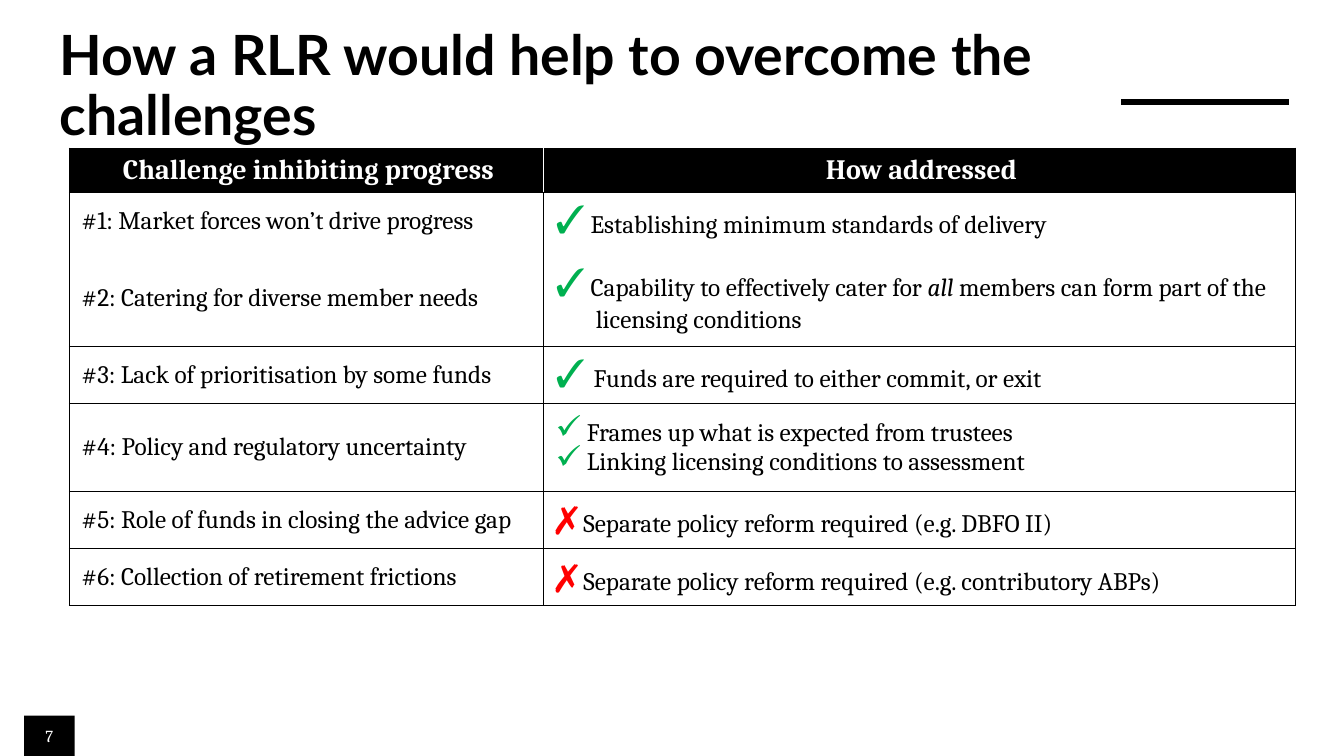
from lxml.etree import SubElement as Sub
from pptx import Presentation
from pptx.dml.color import RGBColor
from pptx.enum.shapes import MSO_CONNECTOR as Line, MSO_SHAPE as Shape
from pptx.enum.text import MSO_ANCHOR as Anchor, PP_ALIGN as Align
from pptx.oxml.ns import qn
from pptx.util import Inches, Pt

BLACK = RGBColor(0, 0, 0)
WHITE = RGBColor(255, 255, 255)
GREEN = RGBColor(0, 0xB0, 0x50)
RED = RGBColor(255, 0, 0)


def write(para, text, size=18, color=BLACK, font="Cambria", bold=False, italic=False):
    run = para.add_run()
    run.text = text
    run.font.size = Pt(size)
    run.font.name = font
    run.font.bold = bold
    run.font.italic = italic
    run.font.color.rgb = color


def edge(cell, side, color):
    line = Sub(cell._tc.get_or_add_tcPr(), qn("a:ln" + side), w=str(Pt(1)))
    if color is None:
        Sub(line, qn("a:noFill"))
    else:
        fill = Sub(line, qn("a:solidFill"))
        Sub(fill, qn("a:srgbClr"), val=str(color))


deck = Presentation()
deck.slide_width = Inches(13.33)
deck.slide_height = Inches(7.5)
slide = deck.slides.add_slide(deck.slide_layouts[5])
shapes = slide.shapes

title = shapes.title
title.left, title.top = Inches(0.48), Inches(0.37)
title.width, title.height = Inches(11.5), Inches(0.99)
frame = title.text_frame
frame.word_wrap = True
frame.vertical_anchor = Anchor.MIDDLE
para = frame.paragraphs[0]
para.alignment = Align.LEFT
para.line_spacing = 0.9
para._p.get_or_add_pPr().set("marL", str(Inches(0.01)))
write(para, "How a RLR would help to overcome the challenges", size=39.6, font="Lato", bold=True)

badge = shapes.add_shape(Shape.RECTANGLE, Inches(0.24), Inches(7.1), Inches(0.5), Inches(0.4))
badge.shadow.inherit = False
badge.fill.solid()
badge.fill.fore_color.rgb = BLACK
badge.line.fill.background()
badge.text_frame.vertical_anchor = Anchor.MIDDLE
para = badge.text_frame.paragraphs[0]
para.alignment = Align.CENTER
write(para, "7", size=12, color=WHITE)

rule = shapes.add_connector(Line.STRAIGHT, Inches(11.12), Inches(1.01), Inches(12.78), Inches(1.01))
rule.line.color.rgb = BLACK
rule.line.width = Pt(4.5)
Sub(rule._element.spPr, qn("a:effectLst"))

head = dict(size=20, color=WHITE, bold=True)
tick = ("✓", dict(size=28, color=GREEN))
cross = ("✗", dict(size=28, color=RED))
rows = [
    (0.42, ("Challenge inhibiting progress", head), [[("How addressed", head)]]),
    (0.48, ("#1: Market forces won’t drive progress", {}),
     [[tick, (" Establishing minimum standards of delivery", {})]]),
    (0.96, ("#2: Catering for diverse member needs", {}),
     [[tick, (" Capability to effectively cater for ", {}), ("all ", dict(italic=True)),
       ("members can form part of the licensing conditions", {})]]),
    (0.57, ("#3: Lack of prioritisation by some funds", {}),
     [[("✓ ", tick[1]), ("Funds are required to either commit, or exit", {})]]),
    (0.87, ("#4: Policy and regulatory uncertainty", {}),
     [[("Frames up what is expected from trustees", {})],
      [("Linking licensing conditions to assessment", {})]]),
    (0.55, ("#5: Role of funds in closing the advice gap", {}),
     [[cross, (" Separate policy reform required (e.g. DBFO II)", {})]]),
    (0.55, ("#6: Collection of retirement frictions", {}),
     [[cross, (" Separate policy reform required (e.g. contributory ABPs)", {})]]),
]
hang = {2: 0.4, 4: 0.31}

table = shapes.add_table(len(rows), 2, Inches(0.69), Inches(1.47), Inches(12.16), Inches(4.4)).table
table.first_row = False
table.horz_banding = False
table.columns[0].width = Inches(4.7)
table.columns[1].width = Inches(7.46)

for r, (height, left, right) in enumerate(rows):
    table.rows[r].height = Inches(height)
    for c, paras in enumerate([[[left]], right]):
        cell = table.cell(r, c)
        cell.vertical_anchor = Anchor.MIDDLE
        cell.margin_left, cell.margin_right = Inches(0.12), Inches(0.08)
        cell.margin_top = cell.margin_bottom = Inches(0.06)
        inner = WHITE if r == 0 else BLACK
        edge(cell, "L", inner if c == 1 else BLACK)
        edge(cell, "R", inner if c == 0 else BLACK)
        edge(cell, "T", None if r == 2 else BLACK)
        edge(cell, "B", None if r == 1 else BLACK)
        if r == 0:
            cell.fill.solid()
            cell.fill.fore_color.rgb = BLACK
        else:
            cell.fill.background()
        for i, runs in enumerate(paras):
            text = cell.text_frame
            para = text.add_paragraph() if i else text.paragraphs[0]
            para.alignment = Align.LEFT if r else Align.CENTER
            if c == 1 and r in hang:
                props = para._p.get_or_add_pPr()
                props.set("marL", str(Inches(hang[r])))
                props.set("indent", str(-Inches(hang[r])))
                if len(paras) > 1:
                    Sub(Sub(props, qn("a:buClr")), qn("a:srgbClr"), val=str(GREEN))
                    Sub(props, qn("a:buSzPct"), val="130000")
                    Sub(props, qn("a:buChar"), char="✓")
            for words, style in runs:
                write(para, words, **style)

deck.save("out.pptx")
